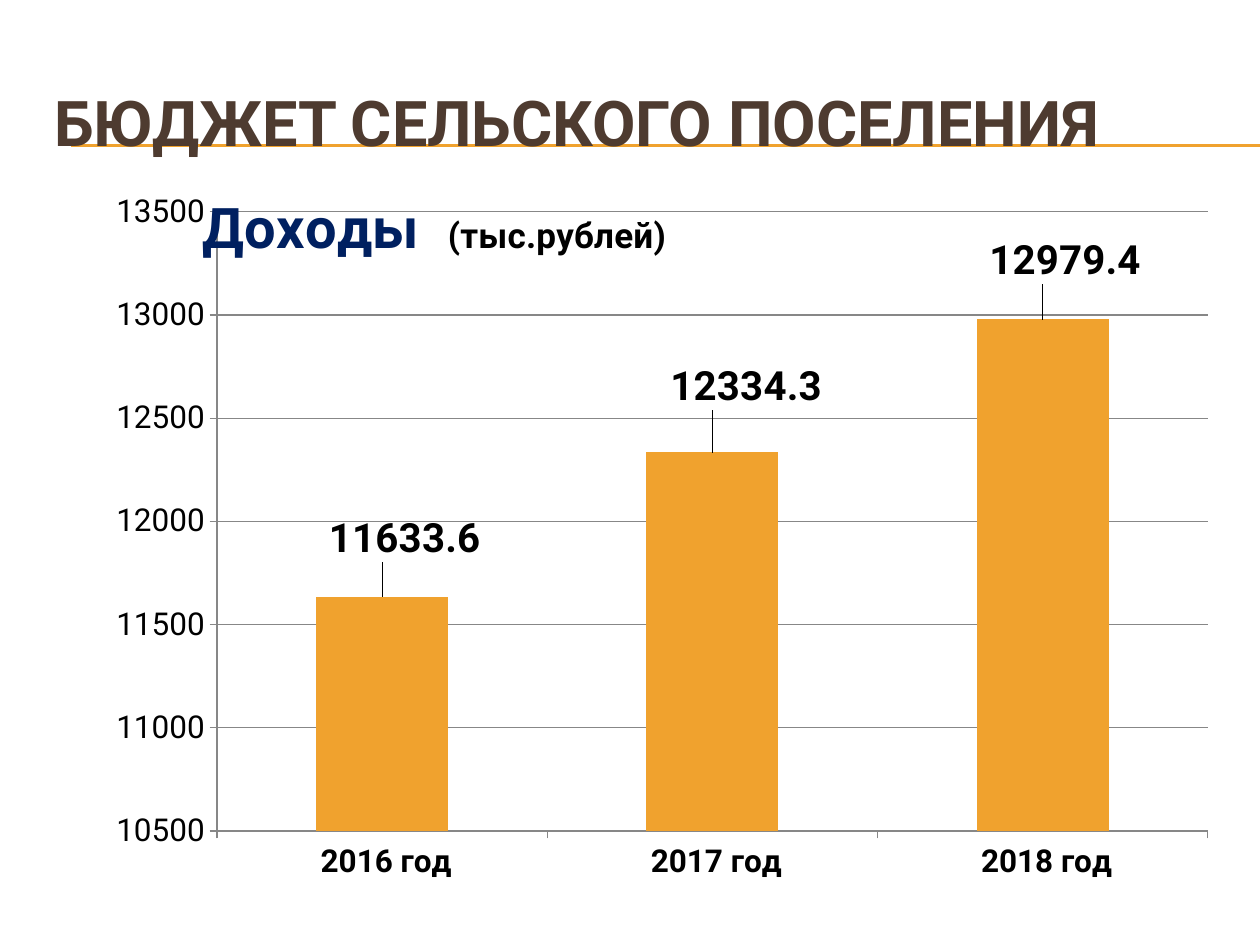
from dataclasses import dataclass

from lxml.etree import SubElement
from pptx import Presentation
from pptx.chart.data import CategoryChartData as ChartData
from pptx.dml.color import RGBColor as Rgb
from pptx.enum.chart import XL_CHART_TYPE as ChartType
from pptx.enum.chart import XL_LABEL_POSITION as LabelPosition
from pptx.enum.chart import XL_TICK_MARK as TickMark
from pptx.enum.shapes import MSO_CONNECTOR as Connector
from pptx.enum.text import MSO_ANCHOR as Anchor
from pptx.enum.text import PP_ALIGN as Align
from pptx.oxml import parse_xml
from pptx.oxml.ns import nsdecls, qn
from pptx.util import Inches, Pt


@dataclass(frozen=True)
class Theme:
    """Colours, typeface and type sizes of the slide."""

    face: str = "Roboto"
    heading: str = "4E3B30"
    accent: str = "F0A22E"
    navy: str = "002060"
    text: str = "000000"
    grid: str = "878787"
    heading_size: int = 36
    income_size: int = 32
    value_size: int = 23
    unit_size: int = 20
    axis_size: int = 18


THEME = Theme()
EM_SPACE = " "
INCOME = {"2016 год": 11633.6, "2017 год": 12334.3, "2018 год": 12979.4}
VALUE_SHIFTS = [(0.02, -0.04), (0.03, -0.05), (0.02, -0.04)]


def style_font(font, size, color, bold=False):
    """Apply the typeface, size, colour and weight to a font."""
    for name, value in {"name": THEME.face, "size": Pt(size), "bold": bold}.items():
        setattr(font, name, value)
    font.color.rgb = Rgb.from_string(color)


def style_line(line, color, width=0.75):
    """Colour a line and set its width."""
    line.color.rgb = Rgb.from_string(color)
    line.width = Pt(width)


def add_heading(slide, text):
    """Fill and place the title placeholder."""
    heading = slide.shapes.title
    box = {"left": 0.33, "top": 0.5, "width": 9.5, "height": 0.92}
    for name, value in box.items():
        setattr(heading, name, Inches(value))
    frame = heading.text_frame
    frame.text = text
    frame.word_wrap = True
    frame.vertical_anchor = Anchor.MIDDLE
    paragraph = frame.paragraphs[0]
    paragraph.alignment = Align.LEFT
    style_font(paragraph.runs[0].font, THEME.heading_size, THEME.heading, True)
    return heading


def add_rule(slide, heading, y):
    """Draw a horizontal rule behind the heading."""
    rule = slide.shapes.add_connector(
        Connector.STRAIGHT, Inches(0.56), Inches(y), Inches(10), Inches(y)
    )
    style_line(rule.line, THEME.accent)
    SubElement(rule.element.spPr, qn("a:effectLst"))
    heading.element.addprevious(rule.element)


def place_part(part, index, **layout):
    """Give a chart part a manual layout at the given child index."""
    for old in part.findall(qn("c:layout")):
        part.remove(old)
    values = "".join(f'<c:{name} val="{value}"/>' for name, value in layout.items())
    part.insert(index, parse_xml(
        f'<c:layout {nsdecls("c")}><c:manualLayout>{values}</c:manualLayout></c:layout>'
    ))


def add_income_title(chart):
    """Write the chart title with its unit in smaller type."""
    paragraph = chart.chart_title.text_frame.paragraphs[0]
    parts = [
        (f"Доходы{EM_SPACE} ", THEME.income_size, THEME.navy),
        ("(тыс.рублей)", THEME.unit_size, THEME.text),
    ]
    for text, size, color in parts:
        run = paragraph.add_run()
        run.text = text
        style_font(run.font, size, color, True)
    title = chart.element.xpath("c:chart/c:title")[0]
    place_part(title, 1, xMode="edge", yMode="edge", x=0.11, y=0.02)


def style_axes(chart):
    """Format both axes and the value gridlines."""
    for axis, bold in ((chart.category_axis, True), (chart.value_axis, False)):
        style_font(axis.tick_labels.font, THEME.axis_size, THEME.text, bold)
        style_line(axis.format.line, THEME.grid)
        axis.major_tick_mark = TickMark.OUTSIDE
        axis.minor_tick_mark = TickMark.NONE
    scale = {"minimum_scale": 10500, "maximum_scale": 13500, "major_unit": 500}
    for name, value in scale.items():
        setattr(chart.value_axis, name, value)
    chart.value_axis.has_major_gridlines = True
    style_line(chart.value_axis.major_gridlines.format.line, THEME.grid)


def style_columns(chart):
    """Colour the columns and set their shifted value labels."""
    plot = chart.plots[0]
    plot.gap_width = 150
    plot.vary_by_categories = False
    income = plot.series[0]
    income.format.fill.solid()
    income.format.fill.fore_color.rgb = Rgb.from_string(THEME.accent)
    values = income.data_labels
    values.show_value = True
    style_font(values.font, THEME.value_size, THEME.text, True)
    for index in range(len(INCOME)):
        label = income.points[index].data_label
        style_font(label.font, THEME.value_size, THEME.text, True)
        label.position = LabelPosition.OUTSIDE_END
    for label, (x, y) in zip(chart.element.xpath(".//c:dLbl"), VALUE_SHIFTS):
        place_part(label, 1, x=x, y=y)


def add_income_chart(slide):
    """Add the column chart of yearly income."""
    data = ChartData()
    data.categories = [EM_SPACE + year for year in INCOME]
    data.add_series("Series 1", INCOME.values())
    chart = slide.shapes.add_chart(
        ChartType.COLUMN_CLUSTERED,
        Inches(0.59), Inches(1.39), Inches(9), Inches(5.83), data,
    ).chart
    chart.has_legend = False
    style_font(chart.font, THEME.axis_size, THEME.text)
    add_income_title(chart)
    style_axes(chart)
    style_columns(chart)
    plot_area = chart.element.xpath("c:chart/c:plotArea")[0]
    place_part(plot_area, 0, layoutTarget="inner", xMode="edge", yMode="edge",
               x=0.126, y=0.05, w=0.874, h=0.843)


def main():
    """Build and save the budget slide."""
    deck = Presentation()
    deck.slide_width, deck.slide_height = Inches(10), Inches(7.5)
    slide = deck.slides.add_slide(deck.slide_layouts[5])
    heading = add_heading(slide, "БЮДЖЕТ СЕЛЬСКОГО ПОСЕЛЕНИЯ")
    for y in (1.15, 1.16):
        add_rule(slide, heading, y)
    add_income_chart(slide)
    deck.save("out.pptx")


if __name__ == "__main__":
    main()
